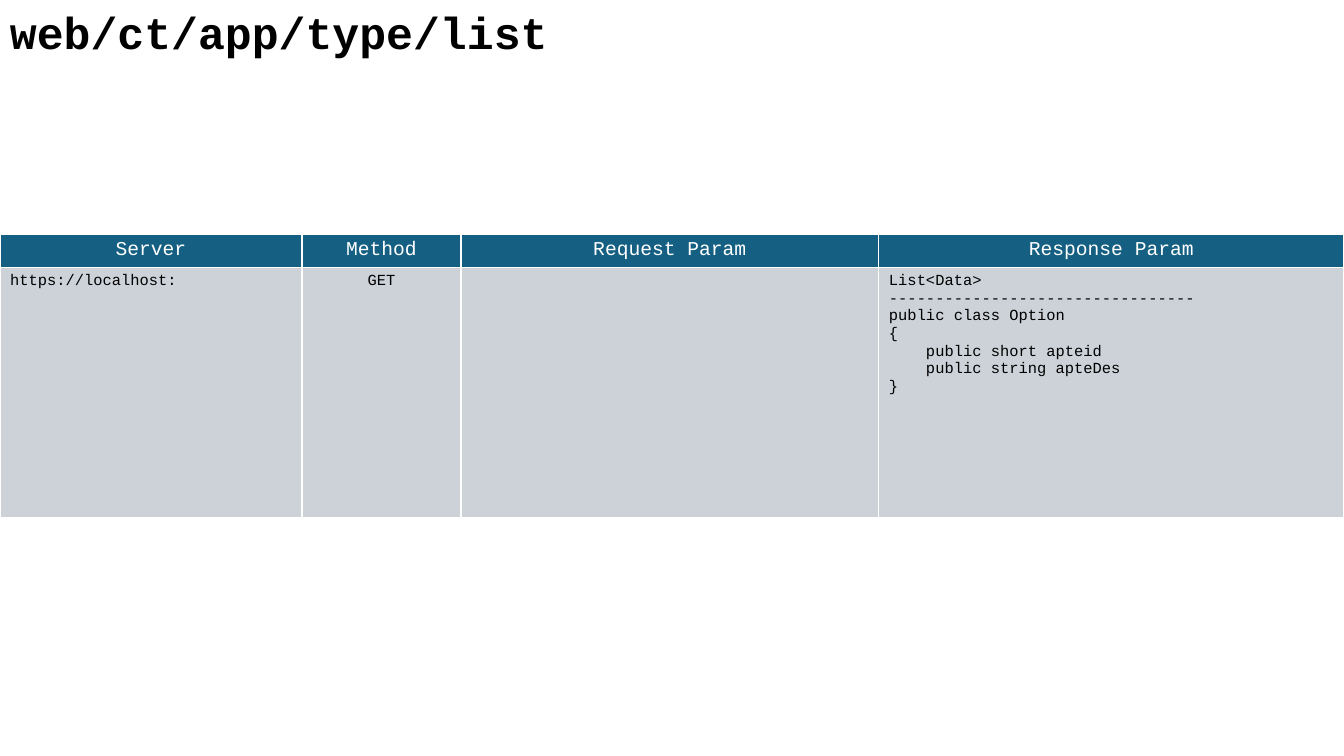
"""Build the endpoint reference slide for web/ct/app/type/list."""
import lxml.etree
import pptx
import pptx.dml.color
import pptx.enum.text
import pptx.oxml.ns
import pptx.util

PX = 914400 / 100.8
THEME = {
    "font": "Courier New",
    "ink": "000000",
    "paper": "FFFFFF",
    "header": "156082",
    "body": "CCD2D8",
    "title_size": 32,
    "header_size": 14,
    "body_size": 11,
    "border_width": 1,
}
COLUMN_WIDTHS = [302, 159, 418, 465]
ROW_HEIGHTS = [32, 250]
RESPONSE = """List<Data>
---------------------------------
public class Option
{
    public short apteid
    public string apteDes
}"""
ROWS = [
    ["Server", "Method", "Request Param", "Response Param"],
    ["https://localhost:", "GET", "", RESPONSE],
]


def px(length):
    return pptx.util.Emu(round(length * PX))


def write(frame, text, size, color, bold=False, align=pptx.enum.text.PP_ALIGN.LEFT):
    frame.text = text
    font_format = {"name": THEME["font"], "size": pptx.util.Pt(size), "bold": bold}
    for para in frame.paragraphs:
        para.alignment = align
        for span in para.runs:
            for name, value in font_format.items():
                setattr(span.font, name, value)
            span.font.color.rgb = pptx.dml.color.RGBColor.from_string(color)


deck = pptx.Presentation()
deck.slide_width, deck.slide_height = px(1344), px(756)
page = deck.slides.add_slide(deck.slide_layouts[6])

title = page.shapes.add_textbox(px(0), px(0), px(953), px(65))
title.text_frame.word_wrap = True
title.text_frame.auto_size = pptx.enum.text.MSO_AUTO_SIZE.SHAPE_TO_FIT_TEXT
write(title.text_frame, "web/ct/app/type/list", THEME["title_size"], THEME["ink"], bold=True)

table = page.shapes.add_table(
    len(ROWS), len(COLUMN_WIDTHS), px(0), px(234), px(sum(COLUMN_WIDTHS)), px(sum(ROW_HEIGHTS))
).table
for column, width in zip(table.columns, COLUMN_WIDTHS):
    column.width = px(width)
for row, height in zip(table.rows, ROW_HEIGHTS):
    row.height = px(height)

for row_index, texts in enumerate(ROWS):
    is_header = row_index == 0
    kind = "header" if is_header else "body"
    for column_index, text in enumerate(texts):
        cell = table.cell(row_index, column_index)
        centred = is_header or column_index == 1
        write(
            cell.text_frame,
            text,
            THEME[kind + "_size"],
            THEME["paper"] if is_header else THEME["ink"],
            align=pptx.enum.text.PP_ALIGN.CENTER if centred else pptx.enum.text.PP_ALIGN.LEFT,
        )
        properties = cell._tc.get_or_add_tcPr()
        for side in ("a:lnL", "a:lnR", "a:lnT", "a:lnB"):
            line = lxml.etree.SubElement(properties, pptx.oxml.ns.qn(side))
            line.set("w", str(pptx.util.Pt(THEME["border_width"])))
            fill = lxml.etree.SubElement(line, pptx.oxml.ns.qn("a:solidFill"))
            lxml.etree.SubElement(fill, pptx.oxml.ns.qn("a:srgbClr")).set("val", THEME["paper"])
        cell.fill.solid()
        cell.fill.fore_color.rgb = pptx.dml.color.RGBColor.from_string(THEME[kind])

deck.save("out.pptx")
